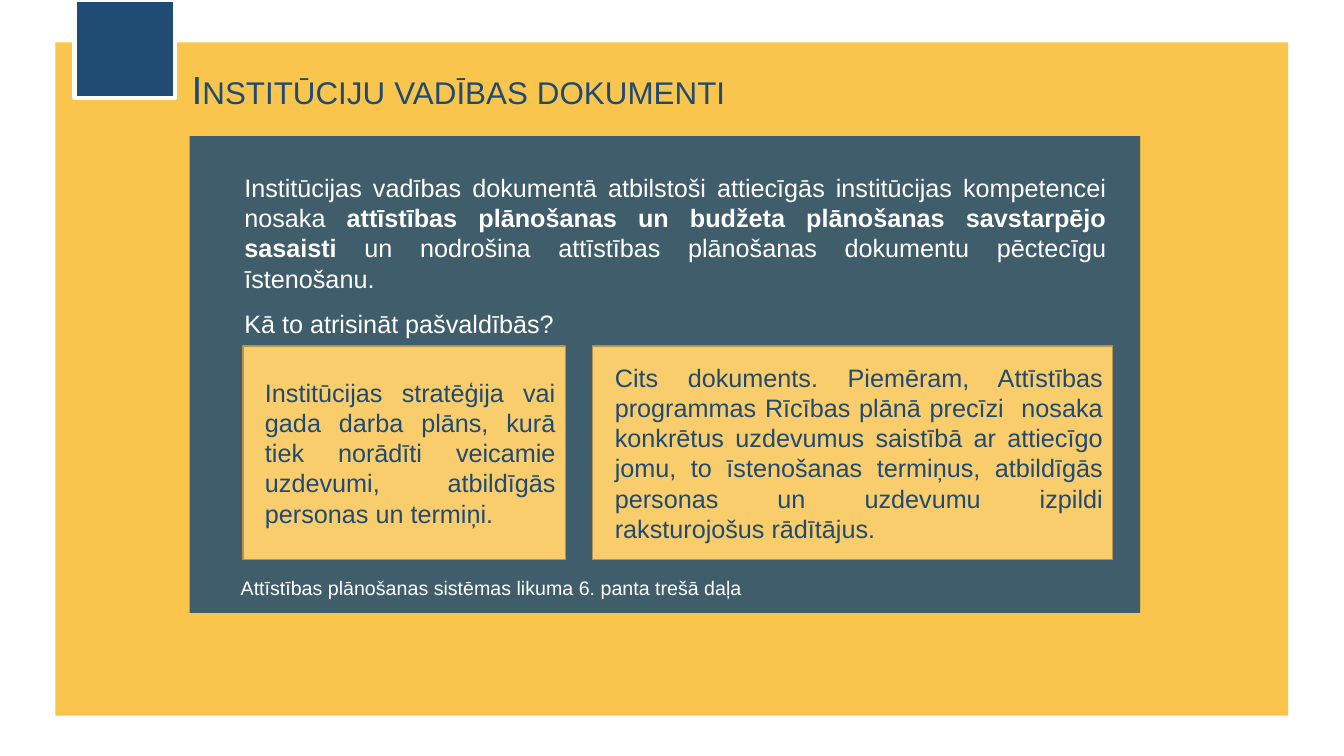
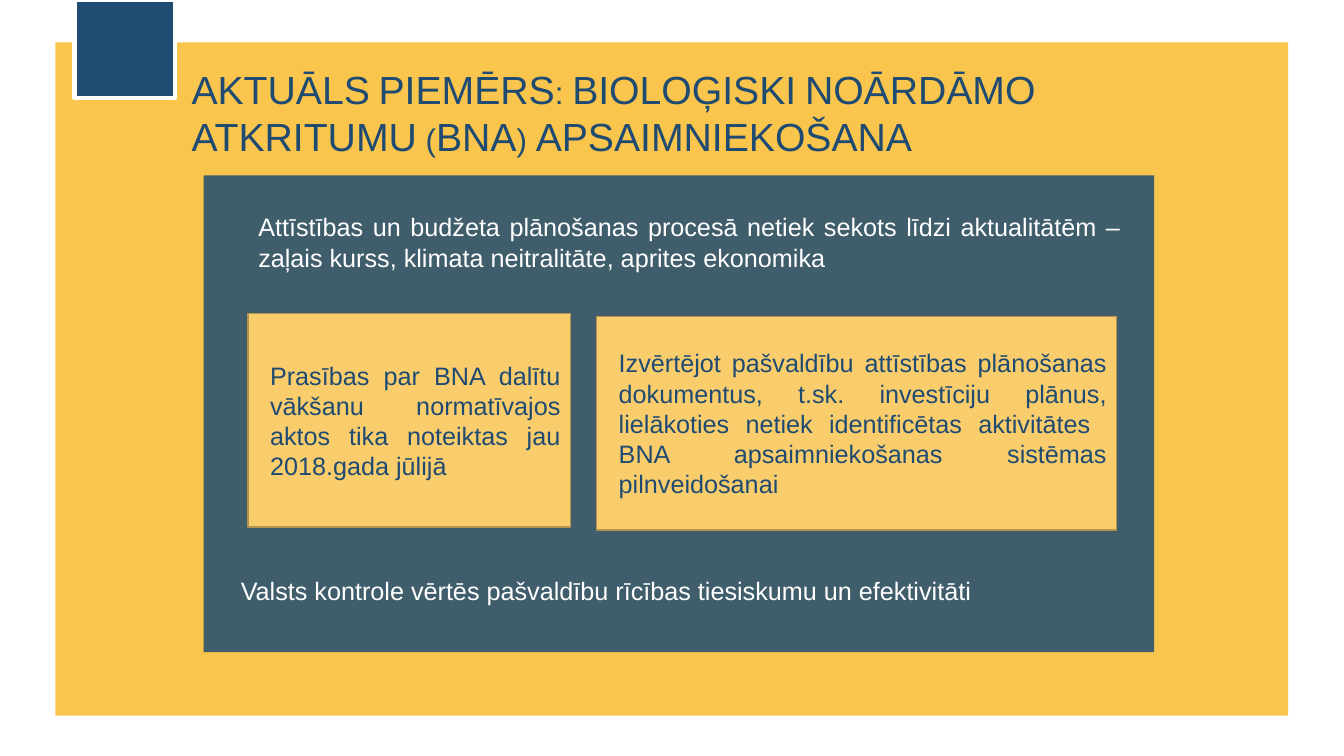
from pptx import Presentation
from pptx import util as u
from pptx.dml import color
from pptx.enum import shapes, text
from pptx.oxml import ns
from lxml import etree

Pt = u.Pt
COLORS = {
    "band": "F9C54C",
    "square": "204B72",
    "card": "F9CD6C",
    "card_line": "B5954E",
    "ink": "1F4A72",
    "white": "FFFFFF",
}


class Deck:
    font = "Arial"
    body_size = 18
    inset = 7.2
    indent = 8.6
    panel_size = (679, 340.6)
    card_height = 152.6

    def __init__(self):
        self.presentation = Presentation()
        self.presentation.slide_width = Pt(960)
        self.presentation.slide_height = Pt(540)
        self.layout = self.presentation.slide_layouts.get_by_name("Title Only")
        self.slide = None

    def add_slide(self):
        first = self.slide is None
        self.slide = self.presentation.slides.add_slide(self.layout)
        if first:
            self.add_frame()

    def add_frame(self):
        band = self.box((39.6, 30.2, 880.6, 481), "band")
        square = self.box((53.3, 0, 72, 69.8), "square", "white", 3)
        tree = self.layout.element.cSld.spTree
        for position, shape in enumerate((band, square), start=2):
            tree.insert(position, shape.element)

    def box(self, place, fill, line=None, width=1):
        shape = self.slide.shapes.add_shape(shapes.MSO_SHAPE.RECTANGLE, *map(Pt, place))
        shape.shadow.inherit = False
        shape.fill.solid()
        shape.fill.fore_color.rgb = color.RGBColor.from_string(COLORS[fill])
        if line:
            shape.line.color.rgb = color.RGBColor.from_string(COLORS[line])
            shape.line.width = Pt(width)
        else:
            shape.line.fill.background()
        return shape

    def add_text(self, shape, paragraphs, ink, size=body_size, indent=0, align="LEFT", anchor="TOP", gap=0):
        frame = shape.text_frame
        frame.word_wrap = True
        frame.auto_size = text.MSO_AUTO_SIZE.NONE
        frame.vertical_anchor = text.MSO_ANCHOR[anchor]
        frame.margin_left = Pt(self.inset + indent)
        frame.margin_right = Pt(self.inset)
        frame.margin_top = frame.margin_bottom = Pt(self.inset / 2)
        for index, runs in enumerate(paragraphs):
            paragraph = frame.add_paragraph() if index else frame.paragraphs[0]
            paragraph.alignment = text.PP_ALIGN[align]
            paragraph.space_before = Pt(gap if index else 0)
            for words, bold in runs:
                run = paragraph.add_run()
                run.text = words
                run.font.name = self.font
                run.font.size = Pt(size)
                run.font.bold = bold
                run.font.color.rgb = color.RGBColor.from_string(COLORS[ink])

    def title(self, words, width, height):
        shape = self.slide.shapes.title
        shape.left, shape.top, shape.width, shape.height = map(Pt, (121, 43.2, width, height))
        self.add_text(shape, [[(words, False)]], "ink", 28, self.indent)
        for properties in shape.element.iter(ns.qn("a:rPr")):
            properties.set("cap", "small")

    def panel(self, left, top, text_height, paragraphs):
        panel = self.box((left, top, *self.panel_size), "square")
        fill_color = panel.element.spPr.find(ns.qn("a:solidFill")).find(ns.qn("a:srgbClr"))
        etree.SubElement(fill_color, ns.qn("a:alpha"), val="85000")
        place = (left + 32, top + 22.3, 630, text_height)
        body = self.slide.shapes.add_textbox(*map(Pt, place))
        self.add_text(body, paragraphs, "white", align="JUSTIFY", gap=11)
        self.slide.shapes.add_group_shape([panel, body])

    def card(self, left, top, width, words):
        card = self.box((left, top, width, self.card_height), "card", "card_line")
        self.add_text(card, [[(words, False)]], "ink", indent=self.indent, align="JUSTIFY", anchor="MIDDLE")

    def footnote(self, words, width, height, size=body_size):
        note = self.slide.shapes.add_textbox(*map(Pt, (164.9, 407.5, width, height)))
        self.add_text(note, [[(words, False)]], "white", size)

    def save(self):
        self.presentation.save("out.pptx")


def main():
    deck = Deck()

    deck.add_slide()
    deck.title("Institūciju vadības dokumenti", 538.6, 39.6)
    deck.panel(135.4, 97.2, 127.4, [
        [
            ("Institūcijas vadības dokumentā atbilstoši attiecīgās institūcijas kompetencei nosaka ", False),
            ("attīstības plānošanas un budžeta plānošanas savstarpējo sasaisti", True),
            (" un nodrošina attīstības plānošanas dokumentu pēctecīgu īstenošanu.", False),
        ],
        [("Kā to atrisināt pašvaldībās?", False)],
    ])
    deck.card(173.5, 247, 230.4,
              "Institūcijas stratēģija vai gada darba plāns, kurā tiek norādīti veicamie uzdevumi, "
              "atbildīgās personas un termiņi.")
    deck.card(423.4, 247, 371.5,
              "Cits dokuments. Piemēram, Attīstības programmas Rīcības plānā precīzi  nosaka "
              "konkrētus uzdevumus saistībā ar attiecīgo jomu, to īstenošanas termiņus, "
              "atbildīgās personas un uzdevumu izpildi raksturojošus rādītājus.")
    deck.footnote("Attīstības plānošanas sistēmas likuma 6. panta trešā daļa", 513.4, 24.5, 14)

    deck.add_slide()
    deck.title("AKTUĀLS PIEMĒRS: BIOLOĢISKI NOĀRDĀMO ATKRITUMU (BNA) APSAIMNIEKOŠANA", 693.4, 82)
    deck.panel(145.4, 125.3, 62, [
        [("Attīstības un budžeta plānošanas procesā netiek sekots līdzi aktualitātēm – "
          "zaļais kurss, klimata neitralitāte, aprites ekonomika", False)],
    ])
    deck.card(177.1, 223.9, 230.4,
              "Prasības par BNA dalītu vākšanu normatīvajos aktos tika noteiktas jau 2018.gada jūlijā")
    deck.card(426.2, 226.1, 371.5,
              "Izvērtējot pašvaldību attīstības plānošanas dokumentus, t.sk. investīciju plānus, "
              "lielākoties netiek identificētas aktivitātes  BNA apsaimniekošanas sistēmas pilnveidošanai")
    deck.footnote("Valsts kontrole vērtēs pašvaldību rīcības tiesiskumu un efektivitāti", 605.5, 28.8)

    deck.save()


if __name__ == "__main__":
    main()
